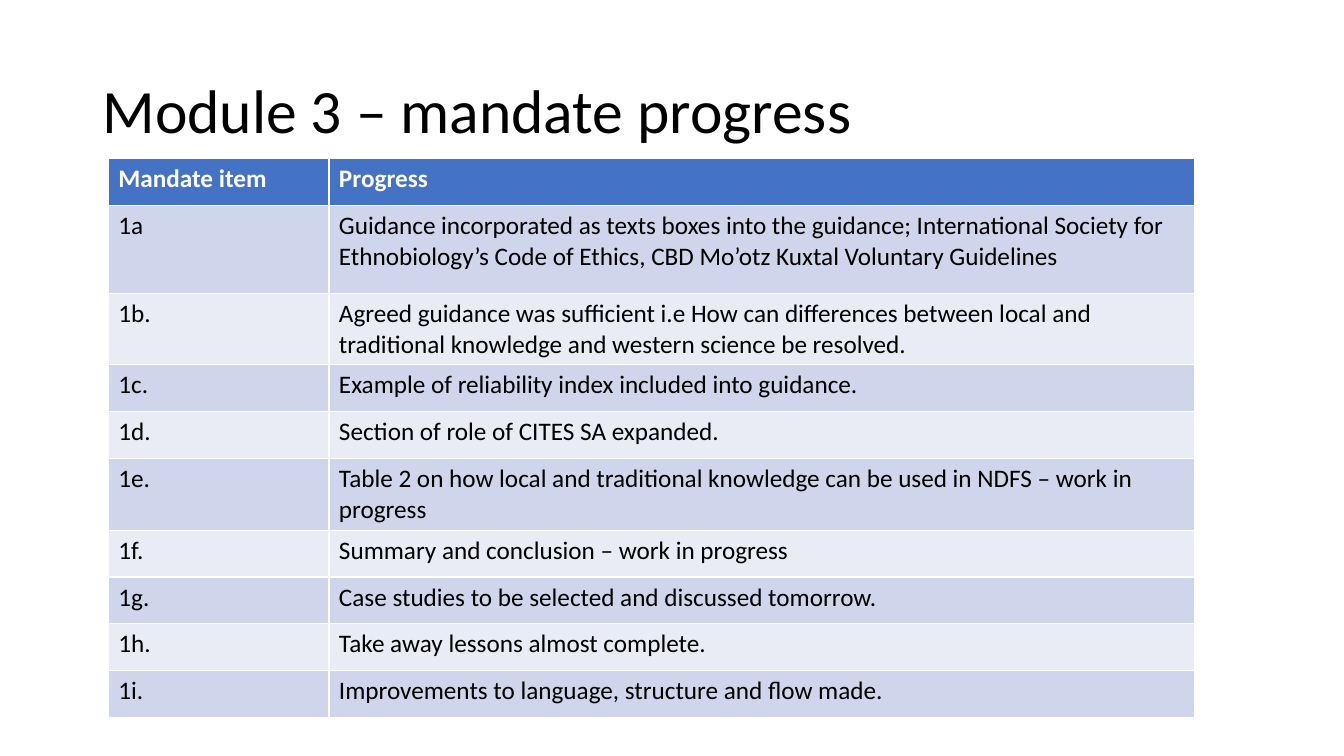
from pptx import Presentation
from pptx.dml.color import RGBColor
from pptx.enum.text import MSO_ANCHOR, MSO_AUTO_SIZE, PP_ALIGN
from pptx.util import Cm, Pt

MIDDLE = MSO_ANCHOR.MIDDLE
NO_AUTOFIT = MSO_AUTO_SIZE.NONE
LEFT = PP_ALIGN.LEFT

# Content
TITLE = "Module 3 – mandate progress"
HEADER = ("Mandate item", "Progress")
ITEMS = [
    ("1a", "Guidance incorporated as texts boxes into the guidance; International "
           "Society for Ethnobiology’s Code of Ethics, CBD Mo’otz Kuxtal Voluntary Guidelines"),
    ("1b.", "Agreed guidance was sufficient i.e How can differences between local and "
            "traditional knowledge and western science be resolved."),
    ("1c.", "Example of reliability index included into guidance."),
    ("1d.", "Section of role of CITES SA expanded."),
    ("1e.", "Table 2 on how local and traditional knowledge can be used in NDFS – work in progress"),
    ("1f.", "Summary and conclusion – work in progress"),
    ("1g.", "Case studies to be selected and discussed tomorrow."),
    ("1h.", "Take away lessons almost complete."),
    ("1i.", "Improvements to language, structure and flow made."),
]

# Look
FONT = "Calibri"
BLACK, WHITE, BLUE = "000000", "FFFFFF", "4472C4"
BANDS = ("CFD5EA", "E9EBF5")
COLUMN_WIDTHS = (5.56, 21.82)
ROW_HEIGHT = 1.18
TALL_ROWS = {1: 2.21, 2: 1.8, 5: 1.8}


def color(value):
    return RGBColor.from_string(value)


def style_text(para, size, text_color, bold=False):
    for span in para.runs:
        span.font.name = FONT
        span.font.size = Pt(size)
        span.font.bold = bold
        span.font.color.rgb = color(text_color)


deck = Presentation()
deck.slide_width, deck.slide_height = Cm(33.87), Cm(19.05)
page = deck.slides.add_slide(deck.slide_layouts[5])

# Title
title = page.shapes.title
title.left, title.top, title.width, title.height = Cm(2.33), Cm(1.01), Cm(29.21), Cm(3.68)
frame = title.text_frame
frame.text = TITLE
frame.auto_size = NO_AUTOFIT
frame.vertical_anchor = MIDDLE
heading = frame.paragraphs[0]
heading.alignment = LEFT
heading.line_spacing = 0.9
style_text(heading, 44, BLACK)

# Table: blue header, then two alternating bands
rows = [HEADER, *ITEMS]
heights = [TALL_ROWS.get(index, ROW_HEIGHT) for index in range(len(rows))]
progress = page.shapes.add_table(
    len(rows), len(HEADER), Cm(2.73), Cm(4),
    Cm(sum(COLUMN_WIDTHS)), Cm(sum(heights))).table
for column, width in zip(progress.columns, COLUMN_WIDTHS):
    column.width = Cm(width)
for index, texts in enumerate(rows):
    is_header = index == 0
    progress.rows[index].height = Cm(heights[index])
    for cell, text in zip(progress.rows[index].cells, texts):
        cell.text_frame.text = text
        cell.fill.solid()
        cell.fill.fore_color.rgb = color(BLUE if is_header else BANDS[(index - 1) % 2])
        style_text(cell.text_frame.paragraphs[0], 18, WHITE if is_header else BLACK, is_header)

deck.save("out.pptx")
